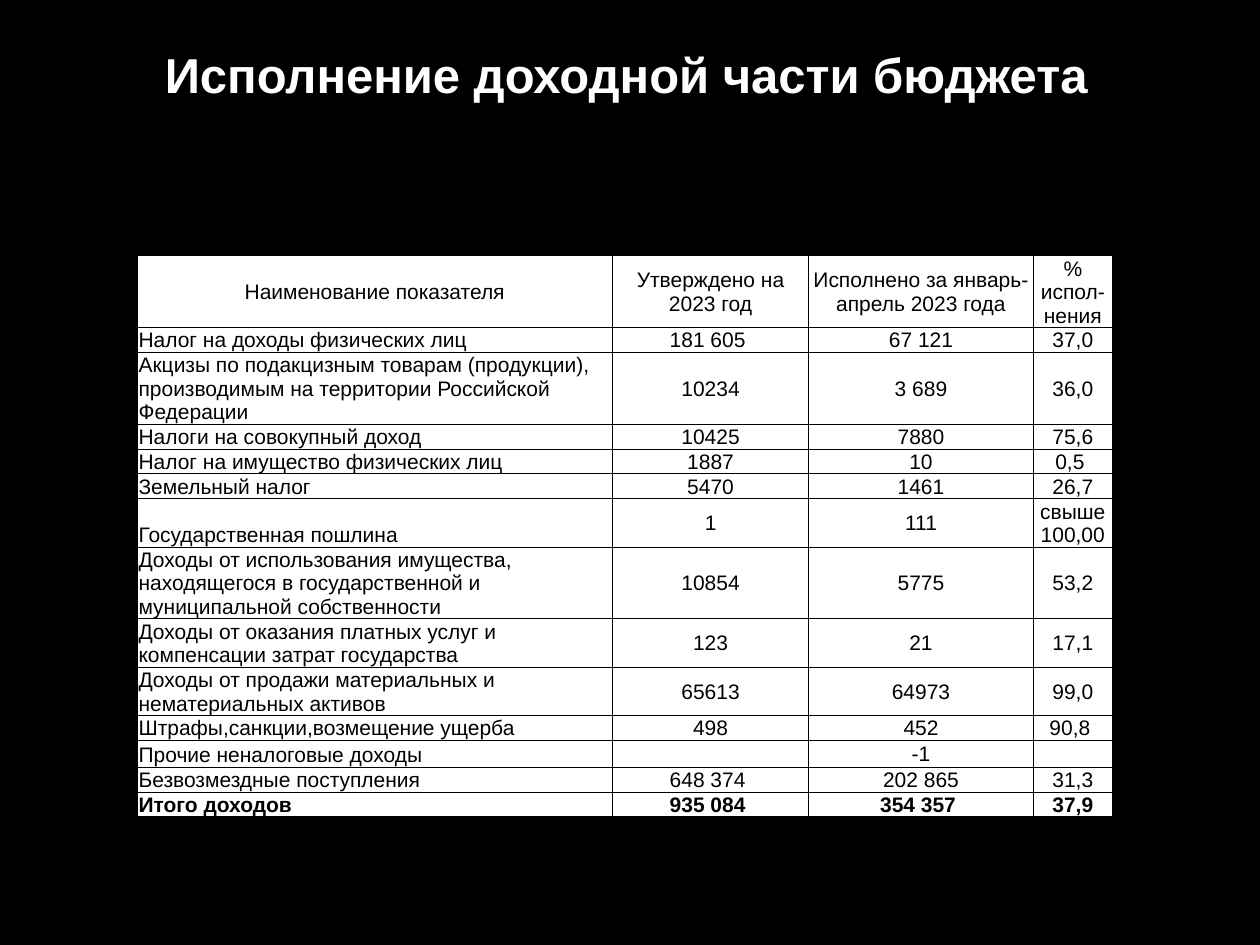
from lxml import etree
from pptx import Presentation
from pptx.dml.color import RGBColor
from pptx.enum.text import MSO_ANCHOR, PP_ALIGN
from pptx.oxml.ns import qn
from pptx.util import Inches, Pt

LEFT, CENTER, JUSTIFY = PP_ALIGN.LEFT, PP_ALIGN.CENTER, PP_ALIGN.JUSTIFY
TOP, MIDDLE, BOTTOM = MSO_ANCHOR.TOP, MSO_ANCHOR.MIDDLE, MSO_ANCHOR.BOTTOM
TITLE_ONLY = 5
FONT = "Arial"
COLORS = {"background": "000000", "title": "FFFFFF", "cell": "FFFFFF", "text": "000000", "border": "000000"}
COLUMNS = [3.77, 1.56, 1.78, 0.63]
LINE_HEIGHT = 0.19
BUDGET = [
    (3, "Наименование показателя", "Утверждено на 2023 год", "Исполнено за январь-апрель 2023 года", "% испол-нения"),
    (1, "Налог на доходы физических лиц", "181 605 ", "67 121", "37,0"),
    (3, "Акцизы по подакцизным товарам (продукции), производимым на территории Российской Федерации",
     "10234", "3 689", "36,0"),
    (1, "Налоги на совокупный доход", "10425", "7880", "75,6"),
    (1, "Налог на имущество физических лиц", "1887", "10", "0,5 "),
    (1, "Земельный налог", "5470", "1461", "26,7"),
    (2, "Государственная пошлина", "1", "111", "свыше 100,00"),
    (3, "Доходы от использования имущества, находящегося в государственной и муниципальной собственности",
     "10854", "5775", "53,2"),
    (2, "Доходы от оказания платных услуг и компенсации затрат государства", "123", "21", "17,1"),
    (2, "Доходы от продажи материальных и нематериальных активов", "65613", "64973", "99,0"),
    (1, "Штрафы,санкции,возмещение ущерба", "498", "452", "90,8 "),
    (1, "Прочие неналоговые доходы", "", "-1", ""),
    (1, "Безвозмездные поступления", "648 374 ", "202 865", "31,3"),
    (1, "Итого доходов", "935 084 ", "354 357 ", "37,9"),
]


def color(name):
    """Return the named colour."""
    return RGBColor.from_string(COLORS[name])


def format_runs(para, size, color_name, bold):
    """Give every run of a paragraph the same font."""
    for span in para.runs:
        span.font.name = FONT
        span.font.size = Pt(size)
        span.font.bold = bold
        span.font.color.rgb = color(color_name)


def add_title(page, box, text):
    """Place the slide title in its box."""
    title = page.shapes.title
    title.left, title.top, title.width, title.height = box
    title.text_frame.text = text
    title.text_frame.vertical_anchor = MIDDLE
    para = title.text_frame.paragraphs[0]
    para.alignment = CENTER
    format_runs(para, 28, "title", True)


def add_borders(cell):
    """Draw thin lines on all four sides of a cell."""
    properties = cell._tc.get_or_add_tcPr()
    for index, side in enumerate(("lnL", "lnR", "lnT", "lnB")):
        line = etree.Element(qn(f"a:{side}"), w=str(Pt(0.5)))
        fill = etree.SubElement(line, qn("a:solidFill"))
        etree.SubElement(fill, qn("a:srgbClr"), val=COLORS["border"])
        properties.insert(index, line)


def fill_cell(cell, text, alignment, anchor, bold):
    """Write and format one table cell."""
    cell.text_frame.text = text
    cell.vertical_anchor = anchor
    cell.margin_left = cell.margin_right = cell.margin_top = Inches(0.01)
    cell.margin_bottom = 0
    cell.fill.solid()
    cell.fill.fore_color.rgb = color("cell")
    add_borders(cell)
    para = cell.text_frame.paragraphs[0]
    para.alignment = alignment
    para._p.get_or_add_endParaRPr().set("sz", "1200")
    format_runs(para, 12, "text", bold)


def add_budget_table(page, box):
    """Place the revenue table, with row heights set by their line counts."""
    table = page.shapes.add_table(len(BUDGET), len(COLUMNS), *box).table
    for column, width in zip(table.columns, COLUMNS):
        column.width = Inches(width)
    last = len(BUDGET) - 1
    for row, (lines, *texts) in enumerate(BUDGET):
        table.rows[row].height = Inches(lines * LINE_HEIGHT)
        for column, text in enumerate(texts):
            alignment, anchor = CENTER, MIDDLE
            if column == 0 and row >= last - 1:
                alignment, anchor = JUSTIFY, TOP
            elif column == 0 and row > 0:
                alignment, anchor = LEFT, BOTTOM
            elif row == last and column < 3:
                anchor = TOP
            fill_cell(table.cell(row, column), text, alignment, anchor, row == last)


def main():
    """Build the budget slide."""
    deck = Presentation()
    deck.slide_width, deck.slide_height = Inches(10), Inches(7.5)
    page = deck.slides.add_slide(deck.slide_layouts[TITLE_ONLY])
    page.background.fill.solid()
    page.background.fill.fore_color.rgb = color("background")
    add_title(page, [Inches(n) for n in (0.47, 0.23, 9, 0.72)], "Исполнение доходной части бюджета")
    height = LINE_HEIGHT * sum(row[0] for row in BUDGET)
    add_budget_table(page, [Inches(n) for n in (1.09, 2.03, sum(COLUMNS), height)])
    deck.save("out.pptx")


if __name__ == "__main__":
    main()
